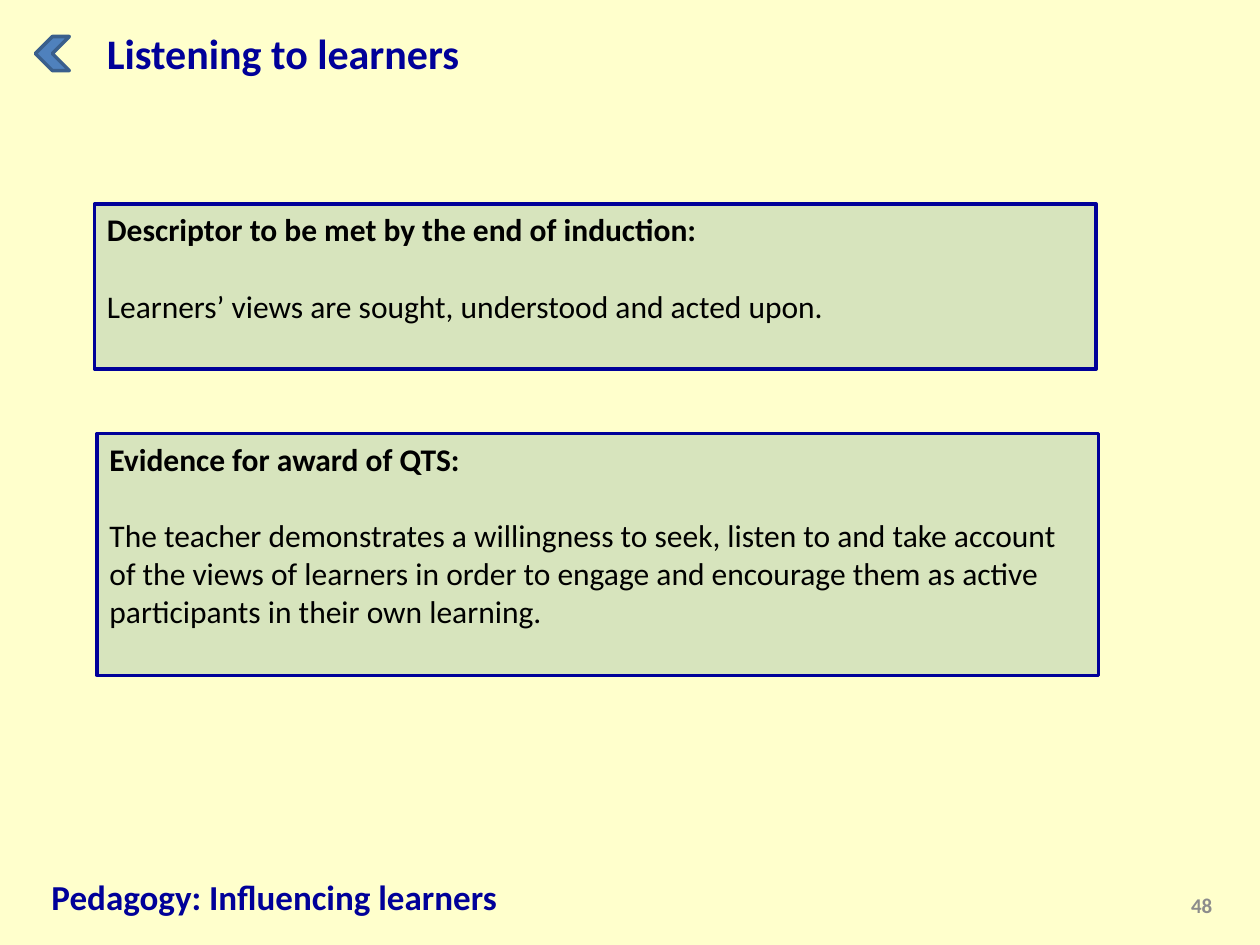
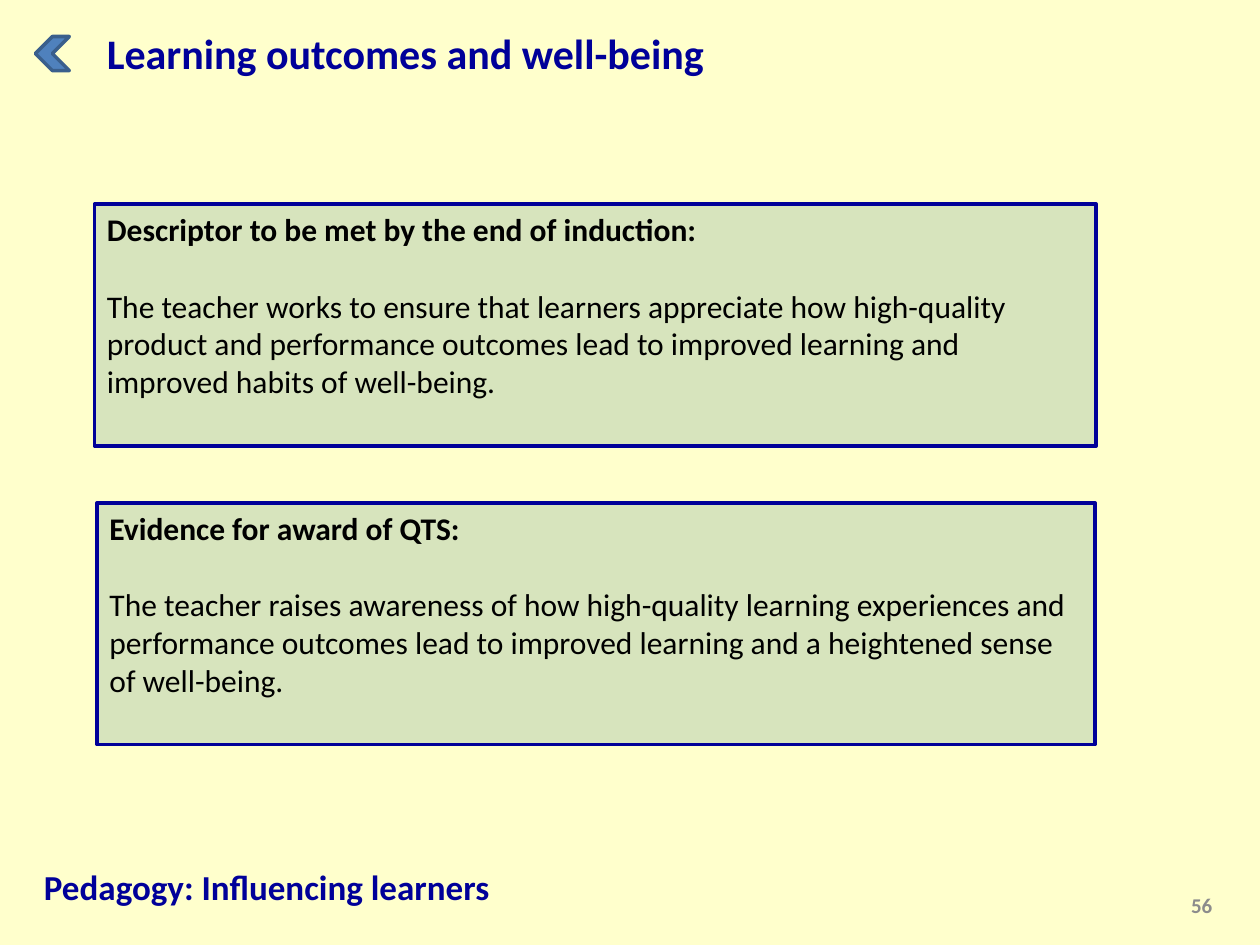
from pptx import Presentation
from pptx import util as u
from pptx.dml.color import RGBColor
from pptx.enum import shapes, text

FONT = "Calibri"
CREAM, NAVY, GREEN = "FFFFCC", "000099", "D7E4BD"
BLUE, DARK_BLUE, BLACK, GREY = "4F81BD", "3A5F8C", "000000", "8C8C8C"

DESCRIPTOR_HEADING = "Descriptor to be met by the end of induction:"
EVIDENCE_HEADING = "Evidence for award of QTS:"
SECTION = "Pedagogy: Influencing learners"

# Boxes are left, top, width, height in inches.
SLIDES = [
    {
        "title": "Listening to learners",
        "number": "48",
        "section_box": (0.31, 6.9, 9.02, 0.44),
        "panels": [
            ((0.75, 1.62, 7.95, 1.31), DESCRIPTOR_HEADING,
             "Learners’ views are sought, understood and acted upon."),
            ((0.77, 3.44, 7.95, 1.92), EVIDENCE_HEADING,
             "The teacher demonstrates a willingness to seek, listen to and take "
             "account of the views of learners in order to engage and encourage "
             "them as active participants in their own learning."),
        ],
    },
    {
        "title": "Learning outcomes and well-being",
        "number": "56",
        "section_box": (0.25, 6.82, 9.02, 0.44),
        "panels": [
            ((0.75, 1.62, 7.95, 1.92), DESCRIPTOR_HEADING,
             "The teacher works to ensure that learners appreciate how "
             "high-quality product and performance outcomes lead to improved "
             "learning and improved habits of well-being."),
            ((0.77, 3.99, 7.92, 1.92), EVIDENCE_HEADING,
             "The teacher raises awareness of how high-quality learning "
             "experiences and performance outcomes lead to improved learning "
             "and a heightened sense of well-being."),
        ],
    },
]


def color(hex_string):
    return RGBColor.from_string(hex_string)


def inches(box):
    return [u.Inches(length) for length in box]


def write(paragraph, words, size=18, ink=BLACK, bold=False,
          align=text.PP_ALIGN.LEFT, space_before=0):
    paragraph.alignment = align
    paragraph.space_before = u.Pt(space_before)
    run = paragraph.add_run()
    run.text = words
    run.font.name = FONT
    run.font.size = u.Pt(size)
    run.font.bold = bold
    run.font.color.rgb = color(ink)


def add_label(slide, box, words, anchor=text.MSO_ANCHOR.TOP, **text_format):
    frame = slide.shapes.add_textbox(*inches(box)).text_frame
    frame.word_wrap = True
    frame.vertical_anchor = anchor
    write(frame.paragraphs[0], words, bold=True, **text_format)


def add_outlined_shape(slide, preset, box, fill, line):
    shape = slide.shapes.add_shape(preset, *inches(box))
    shape.shadow.inherit = False
    shape.fill.solid()
    shape.fill.fore_color.rgb = color(fill)
    shape.line.color.rgb = color(line)
    shape.line.width = u.Pt(2)
    return shape


def add_header(slide, title):
    """Add the back arrow and the slide title."""
    arrow = add_outlined_shape(slide, shapes.MSO_SHAPE.CHEVRON,
                               (0.28, 0.29, 0.27, 0.27), BLUE, DARK_BLUE)
    arrow.rotation = 180
    add_label(slide, (0.75, 0.17, 6.17, 0.5), title, size=24, ink=NAVY)


def add_panel(slide, box, heading, body):
    panel = add_outlined_shape(slide, shapes.MSO_SHAPE.RECTANGLE, box, GREEN, NAVY)
    frame = panel.text_frame
    frame.word_wrap = True
    frame.vertical_anchor = text.MSO_ANCHOR.TOP
    write(frame.paragraphs[0], heading, bold=True)
    write(frame.add_paragraph(), body, space_before=22)


def add_footer(slide, section_box, number):
    add_label(slide, section_box, SECTION, size=20, ink=NAVY)
    add_label(slide, (7.39, 6.98, 2.33, 0.4), number, size=12, ink=GREY,
              align=text.PP_ALIGN.RIGHT, anchor=text.MSO_ANCHOR.MIDDLE)


def add_descriptor_slide(presentation, content):
    slide = presentation.slides.add_slide(presentation.slide_layouts[6])
    slide.background.fill.solid()
    slide.background.fill.fore_color.rgb = color(CREAM)
    add_header(slide, content["title"])
    for box, heading, body in content["panels"]:
        add_panel(slide, box, heading, body)
    add_footer(slide, content["section_box"], content["number"])


def main():
    presentation = Presentation()
    presentation.slide_width = u.Inches(10)
    presentation.slide_height = u.Inches(7.5)
    for content in SLIDES:
        add_descriptor_slide(presentation, content)
    presentation.save("out.pptx")


if __name__ == "__main__":
    main()
